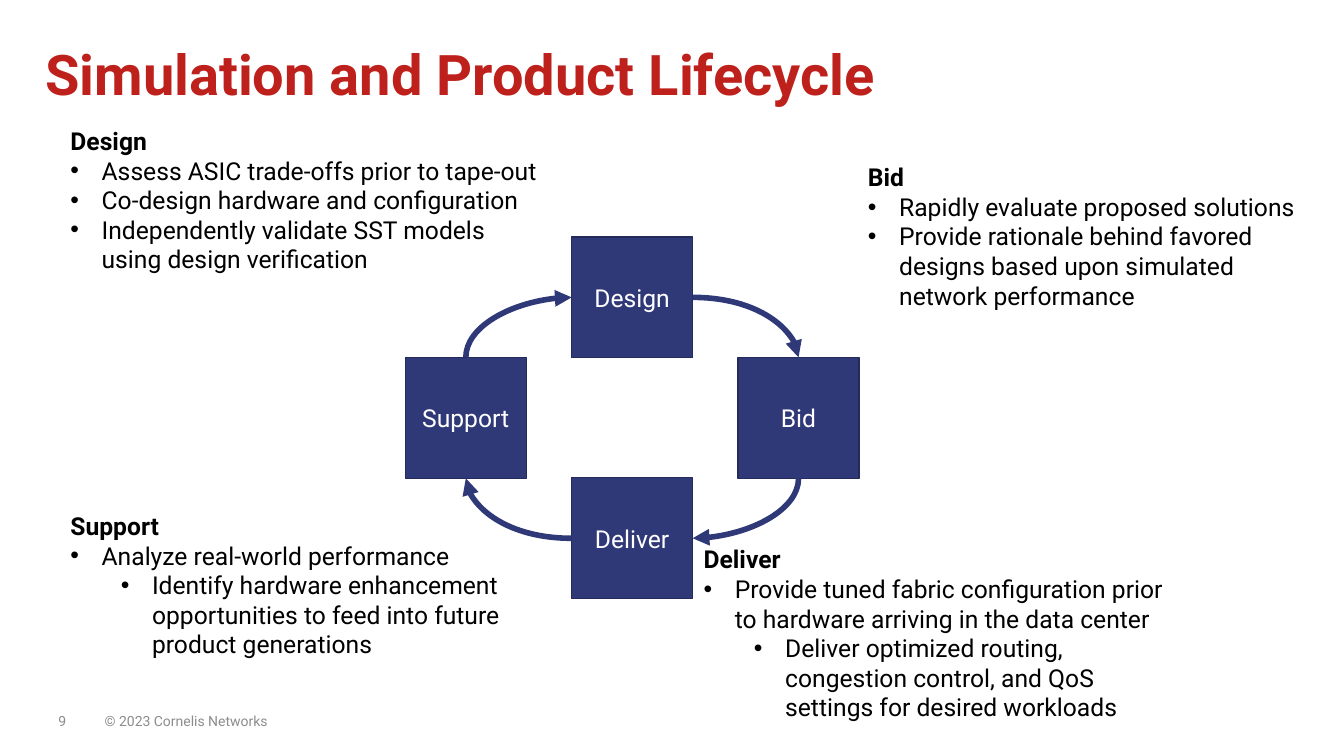
from dataclasses import dataclass

from lxml import etree
from pptx import Presentation
from pptx.dml.color import RGBColor
from pptx.enum.shapes import MSO_CONNECTOR, MSO_SHAPE
from pptx.enum.text import MSO_ANCHOR, MSO_AUTO_SIZE, PP_ALIGN
from pptx.oxml.ns import qn
from pptx.util import Inches, Pt

CURVE = MSO_CONNECTOR.CURVE
RECTANGLE = MSO_SHAPE.RECTANGLE
MIDDLE, TOP_ANCHOR = MSO_ANCHOR.MIDDLE, MSO_ANCHOR.TOP
LEFT_ALIGN, CENTER = PP_ALIGN.LEFT, PP_ALIGN.CENTER
GROW, FIXED = MSO_AUTO_SIZE.SHAPE_TO_FIT_TEXT, MSO_AUTO_SIZE.NONE
TOP, LEFT, BOTTOM, RIGHT = range(4)
TITLE_ONLY = 5


@dataclass(frozen=True)
class Theme:
    font: str = "Roboto"
    red: str = "BE201B"
    navy: str = "303978"
    navy_edge: str = "242A59"
    black: str = "000000"
    white: str = "FFFFFF"
    gray: str = "8C8C8C"
    title_size: float = 40
    body_size: float = 17.6
    footer_size: float = 10


THEME = Theme()
TITLE = "Simulation and Product Lifecycle"
TITLE_BOX = (0.35, 0.04, 9.44, 1.45)
FOOTERS = [
    ("9", (0.48, 6.95, 0.46, 0.4)),
    ("© 2023 Cornelis Networks", (0.94, 6.95, 4.5, 0.4)),
]
RING_BOX = (4.02, 2.35, 4.5, 3.59)
STAGE_SIDE = 1.2
# Stages run clockwise from the top, as fractions of the free width and height.
STAGES = [("Design", 0.5, 0), ("Bid", 1, 0.5), ("Deliver", 0.5, 1), ("Support", 0, 0.5)]
ARROW_SIDES = [(RIGHT, TOP), (BOTTOM, RIGHT), (LEFT, BOTTOM), (TOP, LEFT)]
# Each note: heading, box, then (level, text) bullets.
NOTES = [
    ("Design", (0.6, 1.2, 5.45, 1.58), [
        (0, "Assess ASIC trade-offs prior to tape-out"),
        (0, "Co-design hardware and configuration"),
        (0, "Independently validate SST models \vusing design verification"),
    ]),
    ("Bid", (8.51, 1.56, 4.61, 1.58), [
        (0, "Rapidly evaluate proposed solutions"),
        (0, "Provide rationale behind favored designs based upon simulated "
            "network performance"),
    ]),
    ("Deliver", (6.88, 5.35, 4.86, 2.18), [
        (0, "Provide tuned fabric configuration prior to hardware arriving in "
            "the data center"),
        (1, "Deliver optimized routing, congestion control, and QoS settings "
            "for desired workloads"),
    ]),
    ("Support", (0.6, 5.02, 4.47, 1.58), [
        (0, "Analyze real-world performance"),
        (1, "Identify hardware enhancement opportunities to feed into future "
            "product generations"),
    ]),
]


def inches(box):
    return [Inches(length) for length in box]


def set_all(target, values):
    for name, value in values.items():
        setattr(target, name, value)


def write(para, text, size, color, bold=False, align=LEFT_ALIGN):
    para.text = text
    para.alignment = align
    for span in para.runs:
        set_all(span.font, {"name": THEME.font, "size": Pt(size), "bold": bold})
        span.font.color.rgb = RGBColor.from_string(color)


def add_bullet(para, level):
    para.level = level
    props = para._p.get_or_add_pPr()
    props.set("marL", str(Inches(0.31 + 0.5 * level)))
    props.set("indent", str(Inches(-0.31)))
    font = etree.SubElement(props, qn("a:buFont"))
    font.set("typeface", "Arial")
    etree.SubElement(props, qn("a:buChar")).set("char", "•")


def add_title(page, box):
    title = page.shapes.title
    set_all(title, dict(zip(("left", "top", "width", "height"), inches(box))))
    set_all(title.text_frame, {"vertical_anchor": MIDDLE, "word_wrap": True,
                               "auto_size": FIXED})
    para = title.text_frame.paragraphs[0]
    write(para, TITLE, THEME.title_size, THEME.red, bold=True)
    para.line_spacing = 0.9


def add_text_frame(page, box, anchor, auto_size):
    frame = page.shapes.add_textbox(*inches(box)).text_frame
    set_all(frame, {"word_wrap": True, "vertical_anchor": anchor,
                    "auto_size": auto_size})
    return frame


def add_footer(page, text, box):
    frame = add_text_frame(page, box, MIDDLE, FIXED)
    write(frame.paragraphs[0], text, THEME.footer_size, THEME.gray)


def add_note(page, heading, box, bullets):
    frame = add_text_frame(page, box, TOP_ANCHOR, GROW)
    write(frame.paragraphs[0], heading, THEME.body_size, THEME.black, bold=True)
    for level, text in bullets:
        para = frame.add_paragraph()
        add_bullet(para, level)
        write(para, text, THEME.body_size, THEME.black)


def add_stage(page, label, box):
    stage = page.shapes.add_shape(RECTANGLE, *inches(box))
    stage.shadow.inherit = False
    stage.fill.solid()
    stage.fill.fore_color.rgb = RGBColor.from_string(THEME.navy)
    stage.line.color.rgb = RGBColor.from_string(THEME.navy_edge)
    stage.line.width = Pt(1)
    set_all(stage.text_frame, {"vertical_anchor": MIDDLE, "word_wrap": True})
    write(stage.text_frame.paragraphs[0], label, THEME.body_size, THEME.white,
          align=CENTER)
    return stage


def add_arrow(page, start, end, sides, quarter_turns):
    """Join two stages with a quarter curve, turned clockwise by quarter turns."""
    arrow = page.shapes.add_connector(CURVE, 0, 0, 0, 0)
    arrow.begin_connect(start, sides[0])
    arrow.end_connect(end, sides[1])
    center_x = (arrow.begin_x + arrow.end_x) // 2
    center_y = (arrow.begin_y + arrow.end_y) // 2
    width, height = arrow.width, arrow.height
    if quarter_turns % 2:
        width, height = height, width
    set_all(arrow, {"left": center_x - width // 2, "top": center_y - height // 2,
                    "width": width, "height": height})
    arrow.line.color.rgb = RGBColor.from_string(THEME.navy)
    arrow.line.width = Pt(4)

    props = arrow._element.spPr
    frame = props.find(qn("a:xfrm"))
    for flip in ("flipH", "flipV"):
        frame.attrib.pop(flip, None)
    frame.set("rot", str(quarter_turns * 90 * 60000))
    props.find(qn("a:prstGeom")).set("prst", "curvedConnector2")
    head = etree.SubElement(props.find(qn("a:ln")), qn("a:tailEnd"))
    head.set("type", "triangle")
    etree.SubElement(props, qn("a:effectLst"))


def add_ring(page, box):
    left, top, width, height = box
    stages = [
        add_stage(page, label, (left + across * (width - STAGE_SIDE),
                                top + down * (height - STAGE_SIDE),
                                STAGE_SIDE, STAGE_SIDE))
        for label, across, down in STAGES
    ]
    for turn, sides in enumerate(ARROW_SIDES):
        add_arrow(page, stages[turn], stages[(turn + 1) % len(stages)], sides, turn)


def main():
    deck = Presentation()
    deck.slide_width, deck.slide_height = Inches(13.33), Inches(7.5)
    page = deck.slides.add_slide(deck.slide_layouts[TITLE_ONLY])
    add_title(page, TITLE_BOX)
    for text, box in FOOTERS:
        add_footer(page, text, box)
    add_ring(page, RING_BOX)
    for heading, box, bullets in NOTES:
        add_note(page, heading, box, bullets)
    deck.save("out.pptx")


if __name__ == "__main__":
    main()
